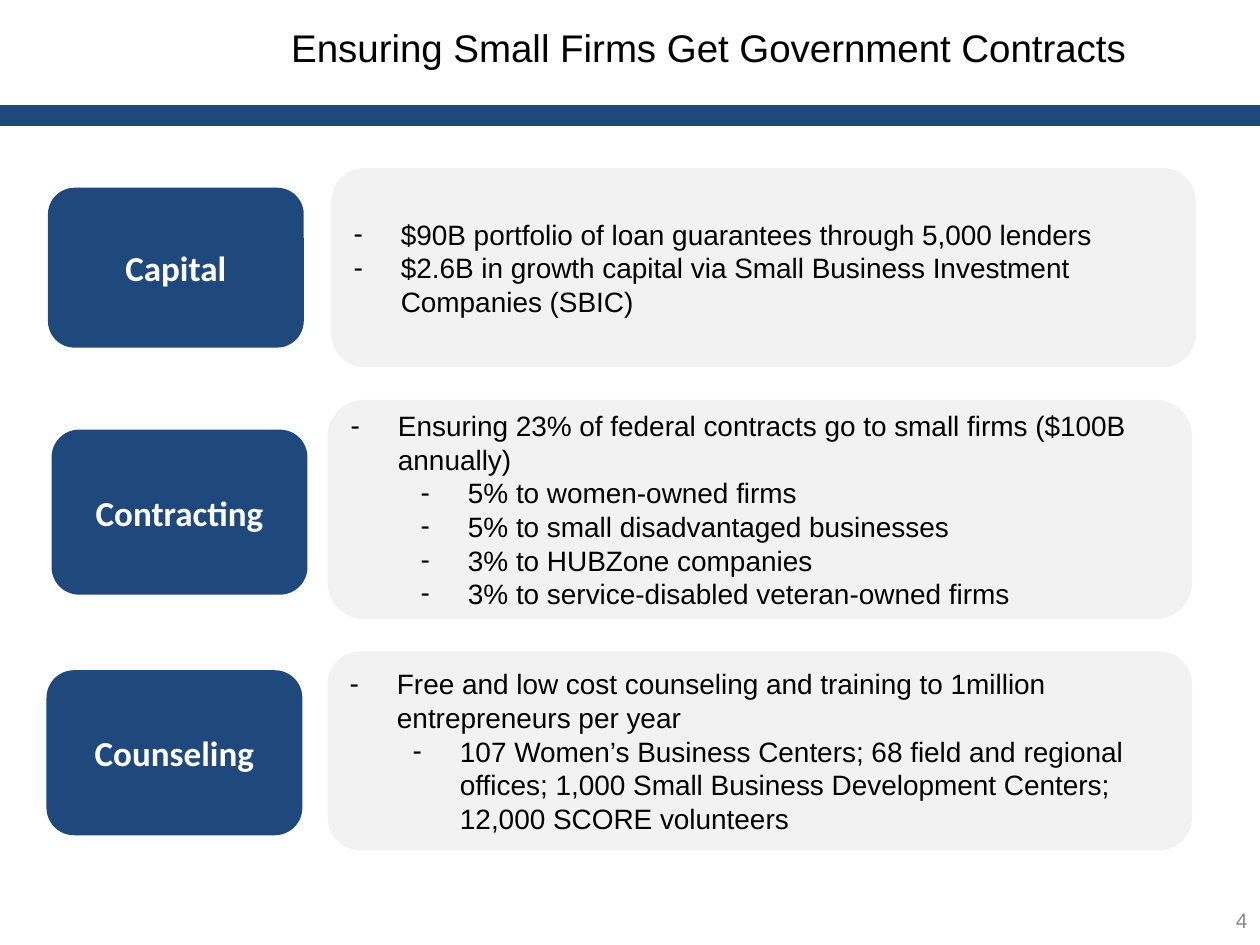
from lxml.etree import SubElement
from pptx import Presentation
from pptx.dml.color import RGBColor
from pptx.enum.shapes import MSO_SHAPE as Preset
from pptx.enum.text import MSO_ANCHOR as Anchor, PP_ALIGN as Align
from pptx.oxml.ns import qn
from pptx.util import Pt

NAVY = RGBColor(0x1F, 0x49, 0x7D)
PALE = RGBColor(0xF2, 0xF2, 0xF2)
GRAY = RGBColor(0x8C, 0x8C, 0x8C)
BLACK = RGBColor(0, 0, 0)
WHITE = RGBColor(255, 255, 255)

TITLE = {"name": "Arial", "size": Pt(22), "color": BLACK}
BODY = {"name": "Arial", "size": Pt(16), "color": BLACK}
LABEL = {"name": "Calibri", "size": Pt(20), "color": WHITE, "bold": True}
NUMBER = {"name": "Arial", "size": Pt(12), "color": GRAY}

HANG = 27
INDENTS = {0: 27, 1: 63, 2: 67}  # left margin in points by list level

# label, label box, card box, list of (level, text); boxes in points
SECTIONS = [
    ("Capital", (27.4, 107.3, 146.2, 91.4), (189.4, 96, 494, 113.8), [
        (0, "$90B portfolio of loan guarantees through 5,000 lenders"),
        (0, "$2.6B in growth capital via Small Business Investment Companies (SBIC)"),
    ]),
    ("Contracting", (29.5, 245.5, 146.2, 94.3), (187.2, 228.5, 494, 125.3), [
        (0, "Ensuring 23% of federal contracts go to small firms ($100B annually)"),
        (2, "5% to women-owned firms"),
        (2, "5% to small disadvantaged businesses"),
        (2, "3% to HUBZone companies"),
        (2, "3% to service-disabled veteran-owned firms"),
    ]),
    ("Counseling", (26.6, 383, 146.2, 94.3), (187.2, 372.2, 494, 113.8), [
        (0, "Free and low cost counseling and training to 1million entrepreneurs per year"),
        (1, "107 Women’s Business Centers; 68 field and regional offices; "
            "1,000 Small Business Development Centers; 12,000 SCORE volunteers"),
    ]),
]


def add_block(page, preset, box, fill):
    block = page.shapes.add_shape(preset, *map(Pt, box))
    block.shadow.inherit = False
    block.fill.solid()
    block.fill.fore_color.rgb = fill
    block.line.fill.background()
    return block


def write(para, text, look, align):
    para.alignment = align
    span = para.add_run()
    span.text = text
    for key, value in look.items():
        if key == "color":
            span.font.color.rgb = value
        else:
            setattr(span.font, key, value)


def prepare(shape):
    """Wrap and middle-anchor the text; return the first paragraph."""
    frame = shape.text_frame
    frame.word_wrap = True
    frame.vertical_anchor = Anchor.MIDDLE
    return frame.paragraphs[0]


def add_text(page, box, text, look, align):
    write(prepare(page.shapes.add_textbox(*map(Pt, box))), text, look, align)


def add_dash(para, level):
    para.level = level
    props = para._p.get_or_add_pPr()
    props.set("marL", str(Pt(INDENTS[level])))
    props.set("indent", str(-Pt(HANG)))
    SubElement(props, qn("a:buFont"), typeface="Arial")
    SubElement(props, qn("a:buChar"), char="-")


def add_card(page, box, items):
    card = add_block(page, Preset.ROUNDED_RECTANGLE, box, PALE)
    para = prepare(card)
    for index, (level, text) in enumerate(items):
        if index:
            para = card.text_frame.add_paragraph()
        add_dash(para, level)
        write(para, text, BODY, Align.LEFT)


def add_label(page, box, text):
    label = add_block(page, Preset.ROUNDED_RECTANGLE, box, NAVY)
    write(prepare(label), text, LABEL, Align.CENTER)


def main():
    deck = Presentation()
    deck.slide_width, deck.slide_height = Pt(720), Pt(540)
    page = deck.slides.add_slide(deck.slide_layouts[6])
    add_block(page, Preset.RECTANGLE, (0, 60, 720, 12), NAVY)
    add_text(page, (552, 511.2, 168, 28.8), "4", NUMBER, Align.RIGHT)
    add_text(page, (144, 0, 522, 54),
             "Ensuring Small Firms Get Government Contracts", TITLE, Align.CENTER)
    for name, label_box, card_box, items in SECTIONS:
        add_card(page, card_box, items)
        add_label(page, label_box, name)
    deck.save("out.pptx")


if __name__ == "__main__":
    main()
